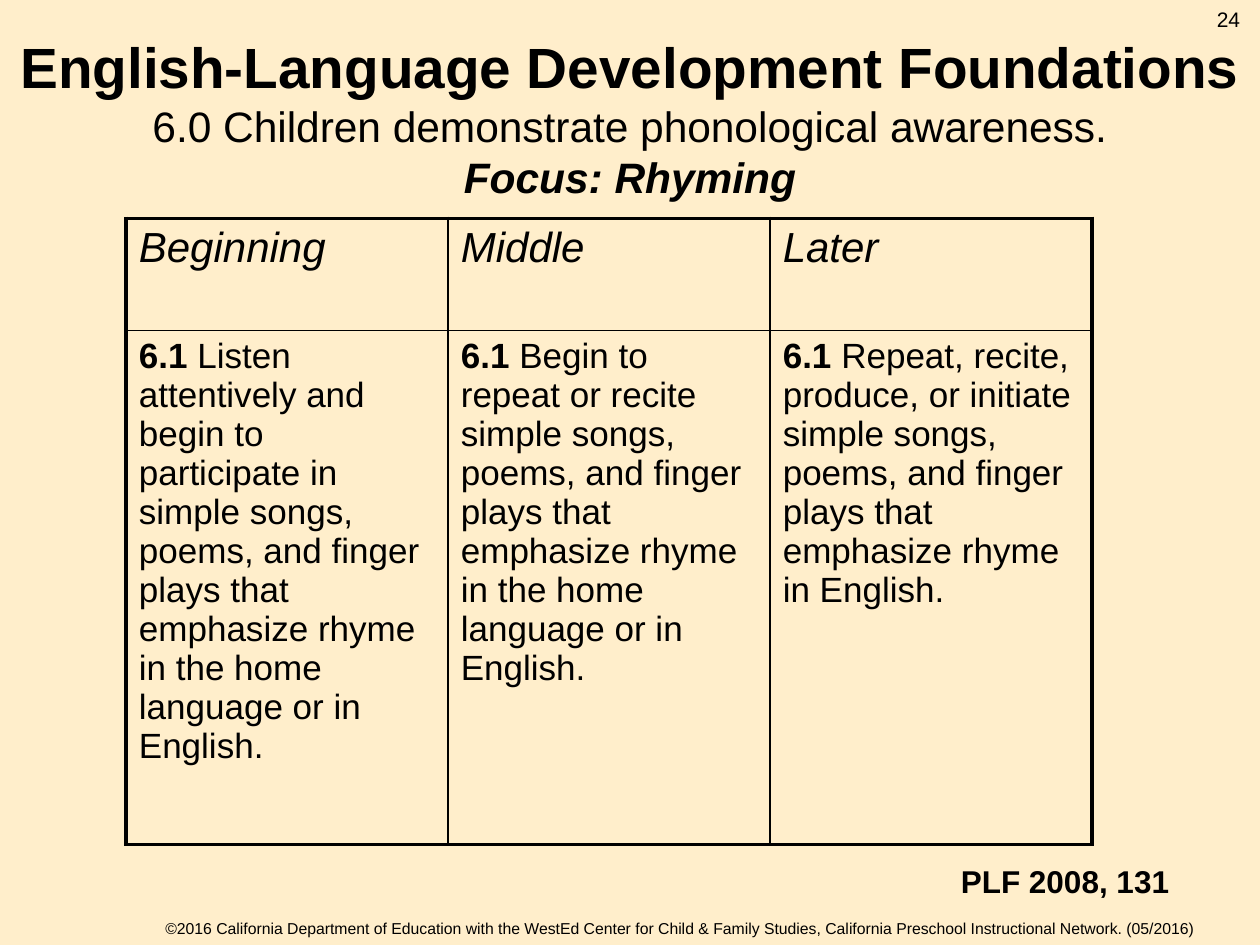
from lxml import etree
from pptx import Presentation
from pptx.dml.color import RGBColor
from pptx.enum.text import MSO_ANCHOR, MSO_AUTO_SIZE, PP_ALIGN
from pptx.oxml.ns import qn
from pptx.util import Cm, Pt

MID = MSO_ANCHOR.MIDDLE
FIXED = MSO_AUTO_SIZE.NONE
LEFT, CENTER = PP_ALIGN.LEFT, PP_ALIGN.CENTER
HUES = {"back": "FFEECB", "ink": "000000"}


def style(run, size, bold=False, slant=False):
    font = run.font
    font.name, font.size = "Arial", Pt(size)
    font.bold, font.italic = bold, slant
    font.color.rgb = RGBColor.from_string(HUES["ink"])


def edge(cell, side, width):
    props = cell._tc.get_or_add_tcPr()
    line = etree.SubElement(props, qn("a:" + side), w=str(Pt(width)))
    fill = etree.SubElement(line, qn("a:solidFill"))
    etree.SubElement(fill, qn("a:srgbClr"), val=HUES["ink"])


deck = Presentation()
deck.slide_width, deck.slide_height = Cm(25.4), Cm(19.05)
slide = deck.slides.add_slide(deck.slide_layouts[5])
back = slide.background.fill
back.solid()
back.fore_color.rgb = RGBColor.from_string(HUES["back"])

title = slide.shapes.title
title.left, title.top = Cm(0), Cm(0.76)
title.width, title.height = Cm(25.4), Cm(3.18)
frame = title.text_frame
frame.text = ("English-Language Development Foundations\v"
              "6.0 Children demonstrate phonological awareness.\v"
              "Focus: Rhyming")
frame.auto_size, frame.vertical_anchor = FIXED, MID
para = frame.paragraphs[0]
para.alignment = CENTER
looks = [(32.4, True, False), (24.3, False, False), (24.3, True, True)]
for run, look in zip(para.runs, looks):
    style(run, *look)
for mark, look in zip(para._p.findall(qn("a:br")), looks):
    etree.SubElement(mark, qn("a:rPr"), sz=str(round(look[0] * 100)))

stages = [
    ("Beginning", "Listen attentively and begin to participate in simple songs, "
     "poems, and finger plays that emphasize rhyme in the home language "
     "or in English."),
    ("Middle", "Begin to repeat or recite simple songs, poems, and finger plays "
     "that emphasize rhyme in the home language or in English."),
    ("Later", "Repeat, recite, produce, or initiate simple songs, poems, and "
     "finger plays that emphasize rhyme in English."),
]
grid = slide.shapes.add_table(2, 3, Cm(2.54), Cm(4.4), Cm(19.47), Cm(12.62)).table
grid.first_row = grid.horz_banding = False
for row, tall in zip(grid.rows, (2.26, 10.36)):
    row.height = Cm(tall)
for col, (stage, goal) in enumerate(stages):
    grid.columns[col].width = Cm(6.49)
    head, body = grid.cell(0, col), grid.cell(1, col)
    head.text_frame.text = stage
    style(head.text_frame.paragraphs[0].runs[0], 24, slant=True)
    para = body.text_frame.paragraphs[0]
    for text, bold in (("6.1", True), (" " + goal, False)):
        run = para.add_run()
        run.text = text
        style(run, 20, bold)
    for row, cell in enumerate((head, body)):
        cell.margin_left, cell.margin_right = Cm(0.26), Cm(0.3)
        outer = {"lnL": col == 0, "lnR": col == 2, "lnT": row == 0, "lnB": row == 1}
        for side, thick in outer.items():
            edge(cell, side, 2.25 if thick else 1)
        cell.fill.background()

notes = [
    ("©2016 California Department of Education with the WestEd Center for "
     "Child & Family Studies, California Preschool Instructional Network. (05/2016)",
     (2, 18.39, 23.4, 0.64), 9, False, CENTER),
    ("24", (24.13, 0, 1.27, 1.02), 12, False, CENTER),
    ("PLF 2008, 131", (19.12, 17.25, 4.75, 1.02), 18, True, LEFT),
]
for text, spot, size, bold, side in notes:
    frame = slide.shapes.add_textbox(*map(Cm, spot)).text_frame
    frame.text = text
    frame.word_wrap = side == CENTER
    para = frame.paragraphs[0]
    para.alignment = side
    style(para.runs[0], size, bold)

deck.save("out.pptx")
